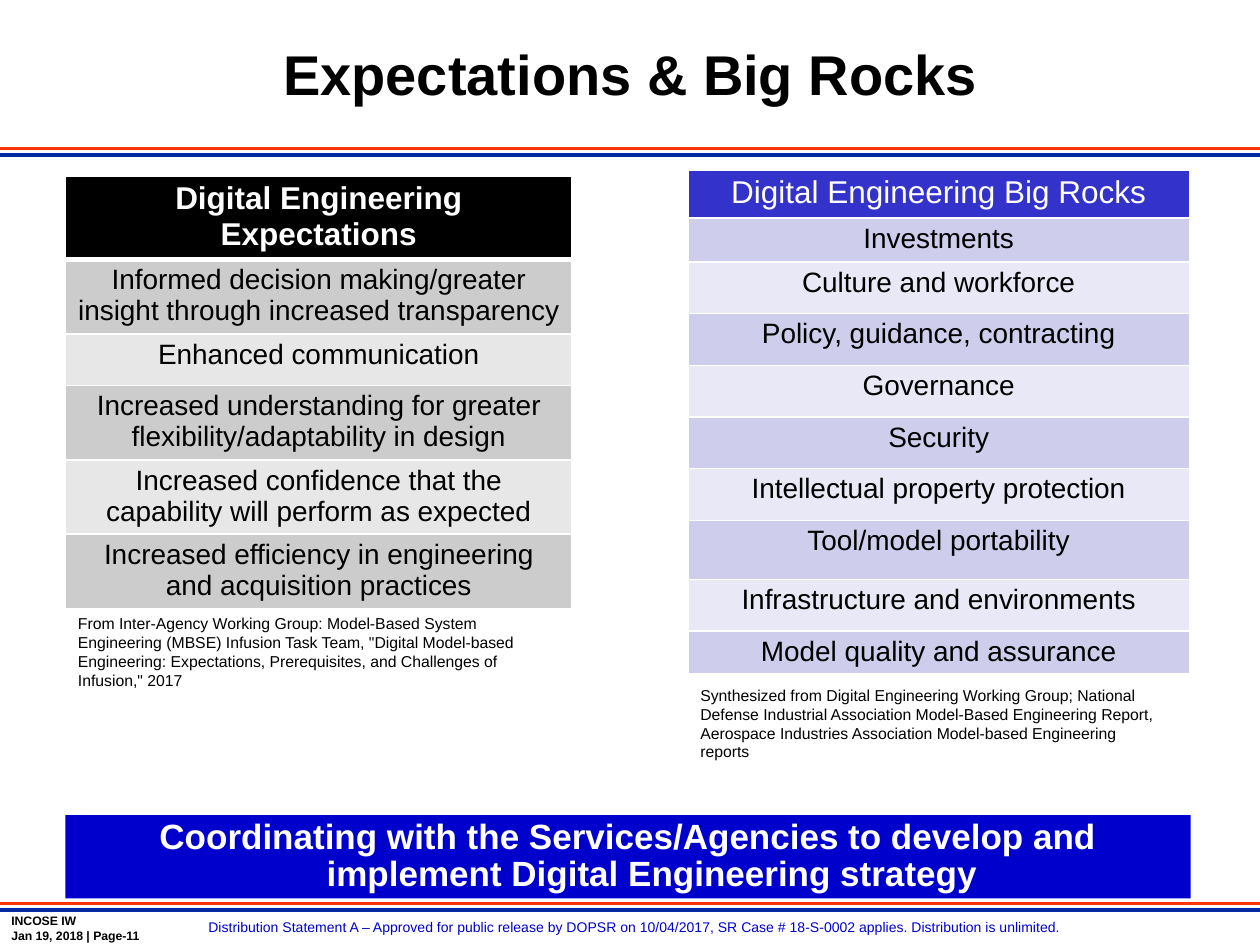
from lxml import etree
from pptx import Presentation
from pptx.dml.color import RGBColor
from pptx.enum.shapes import MSO_CONNECTOR, MSO_SHAPE
from pptx.enum.text import MSO_ANCHOR, PP_ALIGN
from pptx.oxml.ns import qn
from pptx.util import Inches, Pt

CENTER, LEFT = PP_ALIGN.CENTER, PP_ALIGN.LEFT
MIDDLE, TOP = MSO_ANCHOR.MIDDLE, MSO_ANCHOR.TOP
STRAIGHT, RECTANGLE = MSO_CONNECTOR.STRAIGHT, MSO_SHAPE.RECTANGLE

COLORS = {
    "black": "000000", "white": "FFFFFF",
    "orange": "FF3300", "navy": "032AA1", "blue": "0000CC",
    "indigo": "3333CC", "lilac": "CECEEC", "pale_lilac": "E8E8F6",
    "gray": "CCCCCC", "pale_gray": "E7E7E7",
}

EXPECTATIONS = [
    ("Digital Engineering Expectations", 0.66),
    ("Informed decision making/greater insight through increased transparency", 0.59),
    ("Enhanced communication", 0.41),
    ("Increased understanding for greater flexibility/adaptability in design", 0.59),
    ("Increased confidence that the capability will perform as expected", 0.59),
    ("Increased efficiency in engineering and acquisition practices", 0.59),
]
BIG_ROCKS = [
    ("Digital Engineering Big Rocks", 0.38),
    ("Investments", 0.35),
    ("Culture and workforce", 0.41),
    ("Policy, guidance, contracting", 0.41),
    ("Governance", 0.41),
    ("Security", 0.41),
    ("Intellectual property protection", 0.41),
    ("Tool/model portability", 0.47),
    ("Infrastructure and environments", 0.41),
    ("Model quality and assurance", 0.34),
]
EXPECTATIONS_SOURCE = (
    "From Inter-Agency Working Group: Model-Based System Engineering (MBSE) "
    "Infusion Task Team, \"Digital Model-based Engineering: Expectations, "
    "Prerequisites, and Challenges of Infusion,\" 2017")
BIG_ROCKS_SOURCE = (
    "Synthesized from Digital Engineering Working Group; National Defense "
    "Industrial Association Model-Based Engineering Report, Aerospace "
    "Industries Association Model-based Engineering reports")
DISTRIBUTION = (
    "Distribution Statement A – Approved for public release by DOPSR on "
    "10/04/2017, SR Case # 18-S-0002 applies. Distribution is unlimited.")


def rgb(name):
    return RGBColor.from_string(COLORS[name])


def write(frame, lines, size, color="black", bold=False, align=LEFT, anchor=TOP):
    frame.word_wrap = True
    frame.vertical_anchor = anchor
    frame.text = "\n".join(lines)
    for paragraph in frame.paragraphs:
        paragraph.alignment = align
        font = paragraph.font
        font.name, font.size, font.bold = "Arial", Pt(size), bold
        font.color.rgb = rgb(color)


def add_text(slide, box, lines, size, **style):
    frame = slide.shapes.add_textbox(*map(Inches, box)).text_frame
    write(frame, lines, size, **style)
    return frame


def add_title(slide, box, text):
    title = slide.shapes.title
    title.left, title.top, title.width, title.height = map(Inches, box)
    write(title.text_frame, [text], 32, bold=True, align=CENTER, anchor=MIDDLE)


def add_double_rule(slide, left, top, width):
    for offset, color, weight in ((0.05, "navy", 2.25), (0, "orange", 2)):
        y = Inches(top + offset)
        rule = slide.shapes.add_connector(
            STRAIGHT, Inches(left), y, Inches(left + width), y)
        rule.line.color.rgb = rgb(color)
        rule.line.width = Pt(weight)
        etree.SubElement(rule._element.spPr, qn("a:effectLst"))


def set_borders(cell, top, bottom):
    properties = cell._tc.get_or_add_tcPr()
    sides = (("L", 1), ("R", 1), ("T", top), ("B", bottom))
    for index, (side, weight) in enumerate(sides):
        border = etree.Element(qn(f"a:ln{side}"), w=str(Pt(weight)))
        fill = etree.SubElement(border, qn("a:solidFill"))
        etree.SubElement(fill, qn("a:srgbClr"), val=COLORS["white"])
        properties.insert(index, border)


def add_list_table(slide, left, top, width, rows, header_fill, bands,
                   bold_header, header_rule):
    height = sum(row_height for _, row_height in rows)
    table = slide.shapes.add_table(
        len(rows), 1, *map(Inches, (left, top, width, height))).table
    for index, (text, row_height) in enumerate(rows):
        table.rows[index].height = Inches(row_height)
        cell = table.cell(index, 0)
        header = index == 0
        cell.fill.solid()
        cell.fill.fore_color.rgb = rgb(header_fill if header else bands[(index - 1) % 2])
        # Borders take up row height, so the margins are tightened
        cell.margin_top, cell.margin_bottom = Inches(0.04), Inches(0.01)
        write(cell.text_frame, [text], 18 if header else 16,
              color="white" if header else "black",
              bold=header and bold_header, align=CENTER)
        set_borders(cell, top=header_rule if index == 1 else 1,
                    bottom=header_rule if header else 1)


def add_callout(slide, box, text):
    banner = slide.shapes.add_shape(RECTANGLE, *map(Inches, box))
    banner.shadow.inherit = False
    banner.fill.solid()
    banner.fill.fore_color.rgb = rgb("blue")
    banner.line.fill.background()
    write(banner.text_frame, [text], 20, color="white", bold=True,
          align=CENTER, anchor=MIDDLE)
    paragraph = banner.text_frame.paragraphs[0]
    paragraph.line_spacing = Pt(21)
    # Hanging indent
    properties = paragraph._p.get_or_add_pPr()
    properties.set("marL", str(Inches(0.38)))
    properties.set("indent", str(Inches(-0.38)))


def add_footer(slide, left, top):
    event = add_text(slide, (left, top, 2.06, 0.34),
                     ["INCOSE IW", "Jan 19, 2018 | Page-11"], 7, bold=True)
    event.margin_left = 0
    add_text(slide, (left + 1.4, top + 0.04, 7.1, 0.25), [DISTRIBUTION], 8,
             color="blue", align=CENTER)


def main():
    prs = Presentation()
    prs.slide_width, prs.slide_height = Inches(10), Inches(7.5)
    slide = prs.slides.add_slide(prs.slide_layouts[5])

    # Frame: title, rules and footer
    add_title(slide, (1.13, 0.02, 7.75, 1.12), "Expectations & Big Rocks")
    for rule_top in (1.18, 7.17):
        add_double_rule(slide, 0, rule_top, 10)
    add_footer(slide, 0.09, 7.2)

    # Expectations column
    add_list_table(slide, 0.52, 1.4, 4.02, EXPECTATIONS, "black",
                   ("gray", "pale_gray"), bold_header=True, header_rule=3)
    add_text(slide, (0.52, 4.82, 4.02, 0.71), [EXPECTATIONS_SOURCE], 9)

    # Big rocks column
    add_list_table(slide, 5.46, 1.35, 3.98, BIG_ROCKS, "indigo",
                   ("lilac", "pale_lilac"), bold_header=False, header_rule=1)
    add_text(slide, (5.46, 5.39, 3.89, 0.71), [BIG_ROCKS_SOURCE], 9)

    # Closing message
    add_callout(slide, (0.52, 6.47, 8.93, 0.66),
                "Coordinating with the Services/Agencies to develop and "
                "implement Digital Engineering strategy")

    prs.save("out.pptx")


if __name__ == "__main__":
    main()
